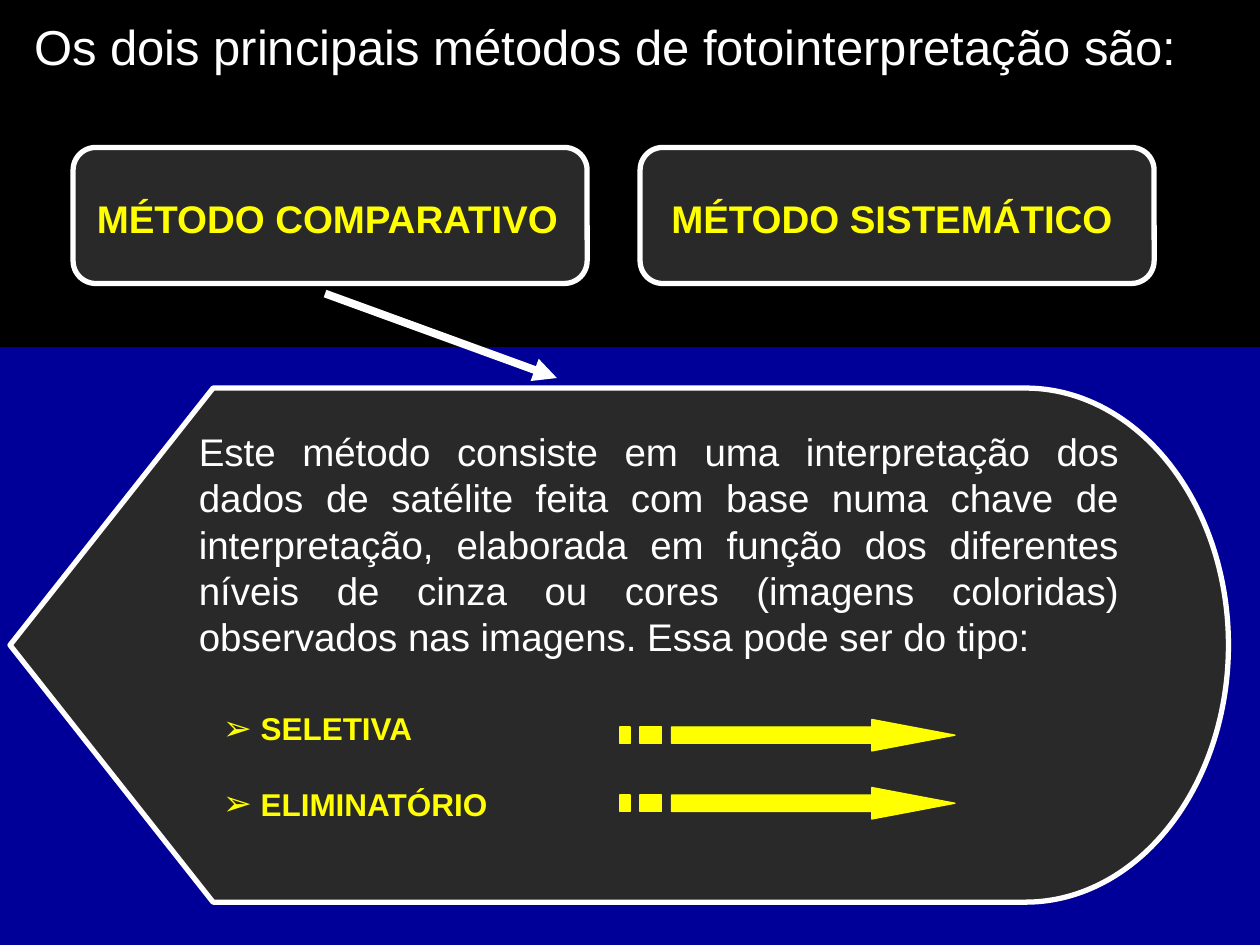
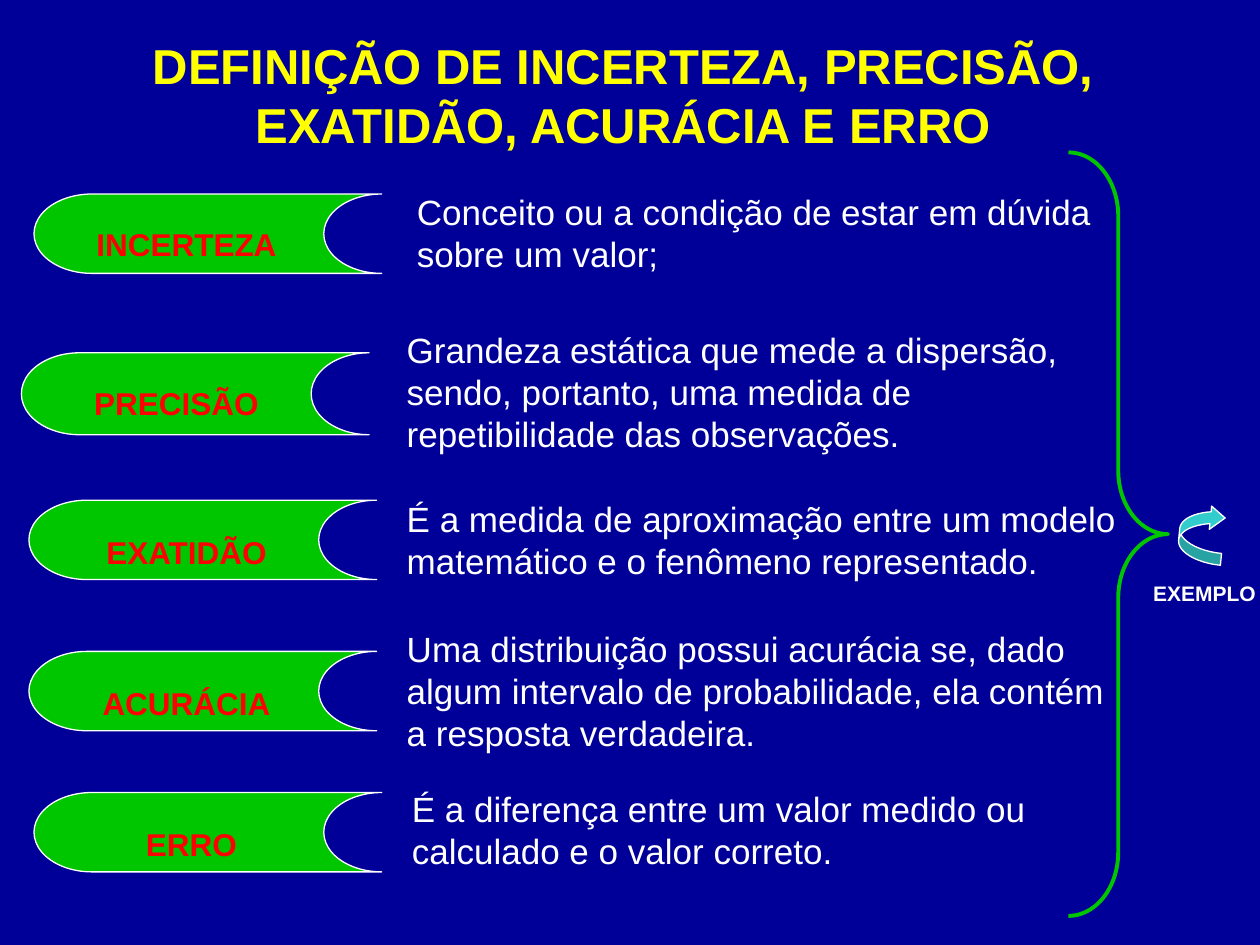
from dataclasses import dataclass

from lxml import etree
from pptx import Presentation
from pptx.dml.color import RGBColor
from pptx.enum.shapes import MSO_CONNECTOR, MSO_SHAPE as Shape
from pptx.enum.text import MSO_ANCHOR, MSO_AUTO_SIZE, PP_ALIGN as Align
from pptx.oxml.ns import qn
from pptx.util import Inches, Pt

COLORS = {
    "blue": "000099", "black": "000000", "panel": "292929", "white": "FFFFFF",
    "yellow": "FFFF00", "green": "00C600", "red": "FF0000", "cyan": "33CCCC",
}
FONT = "Arial"
Box = tuple[float, float, float, float]


@dataclass(frozen=True)
class TextStyle:
    size: float
    color: str
    bold: bool = False
    align: Align = Align.LEFT


@dataclass(frozen=True)
class Method:
    name: str
    left: float
    text_left: float


@dataclass(frozen=True)
class KeyType:
    name: str
    text_top: float
    arrow_top: float


@dataclass(frozen=True)
class Term:
    name: str
    definition: str
    tab: tuple[float, float]
    label: tuple[float, float]
    text: tuple[float, float]
    lines: int
    tab_height: float = 0.63


INTRO = TextStyle(28, "white", align=Align.JUSTIFY)
HEADING = TextStyle(28, "yellow", True, Align.CENTER)
METHOD = TextStyle(22, "yellow", True)
EXPLANATION = TextStyle(22, "white", align=Align.JUSTIFY)
BULLET = TextStyle(18, "yellow", True)
DEFINITION = TextStyle(20, "white")
LABEL = TextStyle(18, "red", True, Align.CENTER)
CAPTION = TextStyle(12, "white", True, Align.CENTER)

METHODS = [
    Method("MÉTODO COMPARATIVO", 0.58, 0.67),
    Method("MÉTODO SISTEMÁTICO", 5.08, 5.23),
]
KEY_TYPES = [
    KeyType("SELETIVA", 5.58, 5.71),
    KeyType("ELIMINATÓRIO", 6.18, 6.25),
]
TERMS = [
    Term("INCERTEZA", "Conceito ou a condição de estar em dúvida sobre um valor;",
         (0.27, 1.54), (0.22, 1.74), (3.21, 1.46), 2),
    Term("PRECISÃO", "Grandeza estática que mede a dispersão, sendo, portanto, "
         "uma medida de repetibilidade das observações.",
         (0.17, 2.8), (0.14, 3), (3.13, 2.56), 3, 0.65),
    Term("EXATIDÃO", "É a medida de aproximação entre um modelo matemático e o "
         "fenômeno representado.",
         (0.23, 3.97), (0.22, 4.18), (3.13, 3.9), 3),
    Term("ACURÁCIA", "Uma distribuição possui acurácia se, dado algum intervalo de "
         "probabilidade, ela contém a resposta verdadeira.",
         (0.23, 5.17), (0.22, 5.38), (3.13, 4.93), 3),
    Term("ERRO", "É a diferença entre um valor medido ou calculado e o valor correto.",
         (0.27, 6.29), (0.26, 6.5), (3.17, 6.2), 2),
]


def rgb(name: str) -> RGBColor:
    return RGBColor.from_string(COLORS[name])


def inches(box: Box) -> list[Inches]:
    return [Inches(v) for v in box]


def write(tf, text: str, style: TextStyle, wrap: bool = True) -> None:
    tf.text = text
    tf.word_wrap = wrap
    tf.auto_size = MSO_AUTO_SIZE.NONE
    tf.vertical_anchor = MSO_ANCHOR.TOP
    p = tf.paragraphs[0]
    p.alignment = style.align
    for r in p.runs:
        r.font.name = FONT
        r.font.size = Pt(style.size)
        r.font.bold = style.bold
        r.font.color.rgb = rgb(style.color)


def add_text(slide, box: Box, text: str, style: TextStyle, wrap: bool = True):
    sp = slide.shapes.add_textbox(*inches(box))
    write(sp.text_frame, text, style, wrap)
    return sp


def add_title_slide(prs, box: Box, text: str, style: TextStyle):
    slide = prs.slides.add_slide(prs.slide_layouts[5])
    title = slide.shapes.title
    title.left, title.top, title.width, title.height = inches(box)
    write(title.text_frame, text, style)
    return slide


def paint(sp, fill: str | None, line: str, width: float) -> None:
    sp.shadow.inherit = False
    if fill:
        sp.fill.solid()
        sp.fill.fore_color.rgb = rgb(fill)
    else:
        sp.fill.background()
    sp.line.color.rgb = rgb(line)
    sp.line.width = Pt(width)


def add_box(slide, kind: Shape, box: Box, fill: str | None, line: str, width: float = 0.75):
    sp = slide.shapes.add_shape(kind, *inches(box))
    paint(sp, fill, line, width)
    return sp


def add_pointer(slide, start: tuple[float, float], end: tuple[float, float]) -> None:
    line = slide.shapes.add_connector(MSO_CONNECTOR.STRAIGHT, *map(Inches, start + end))
    line.line.color.rgb = rgb("white")
    line.line.width = Pt(4.5)
    etree.SubElement(line.line._get_or_add_ln(), qn("a:tailEnd"), type="triangle")
    etree.SubElement(line._element.spPr, qn("a:effectLst"))


def add_bullet(p) -> None:
    pPr = p._p.get_or_add_pPr()
    pPr.set("marL", str(Inches(0.3)))
    pPr.set("indent", str(-Inches(0.3)))
    etree.SubElement(pPr, qn("a:buSzPct"), val="110000")
    etree.SubElement(pPr, qn("a:buFont"), typeface=FONT)
    etree.SubElement(pPr, qn("a:buChar"), char="➢")


def add_striped_arrow(slide, top: float) -> None:
    upper, lower, bottom = top + 0.06, top + 0.19, top + 0.25
    head = [(6.92, top), (6.92, upper), (5.33, upper), (5.33, lower),
            (6.92, lower), (6.92, bottom), (7.58, top + 0.125)]
    stripes = [[(left, upper), (left, lower), (right, lower), (right, upper)]
               for left, right in ((5.08, 5.25), (4.92, 5))]
    builder = slide.shapes.build_freeform(Inches(head[0][0]), Inches(head[0][1]))
    for i, outline in enumerate([head, *stripes]):
        points = [(Inches(x), Inches(y)) for x, y in outline]
        if i:
            builder.move_to(*points[0])
        builder.add_line_segments(points[1:], close=True)
    paint(builder.convert_to_shape(), "yellow", "yellow", 0.75)


def build_methods(prs) -> None:
    slide = add_title_slide(prs, (0.17, 0.08, 9.5, 0.57),
                            "Os dois principais métodos de fotointerpretação são:", INTRO)
    band = add_box(slide, Shape.RECTANGLE, (0, 0, 10, 2.75), "black", "black")
    slide.shapes._spTree.insert(2, band._element)
    for m in METHODS:
        add_box(slide, Shape.FLOWCHART_ALTERNATE_PROCESS, (m.left, 1.17, 4.08, 1.08),
                "panel", "white", 3)
        add_text(slide, (m.text_left, 1.5, 4.17, 0.47), m.name, METHOD)
    add_box(slide, Shape.FLOWCHART_DISPLAY, (0.08, 3.08, 9.67, 4.08), "panel", "white", 3)
    add_pointer(slide, (2.58, 2.33), (4.42, 3))
    add_text(slide, (1.48, 3.35, 7.5, 1.93),
             "Este método consiste em uma interpretação dos dados de satélite feita com base "
             "numa chave de interpretação, elaborada em função dos diferentes níveis de cinza "
             "ou cores (imagens coloridas) observados nas imagens. Essa pode ser do tipo:",
             EXPLANATION)
    for k in KEY_TYPES:
        sp = add_text(slide, (1.67, k.text_top, 2.6, 0.4), k.name, BULLET)
        add_bullet(sp.text_frame.paragraphs[0])
        add_striped_arrow(slide, k.arrow_top)


def build_definitions(prs) -> None:
    slide = add_title_slide(prs, (0.16, 0.23, 9.57, 1.03),
                            "DEFINIÇÃO DE INCERTEZA, PRECISÃO, EXATIDÃO, ACURÁCIA E ERRO",
                            HEADING)
    for t in TERMS:
        add_box(slide, Shape.FLOWCHART_STORED_DATA, (*t.tab, 2.76, t.tab_height),
                "green", "white")
        add_text(slide, (*t.label, 2.52, 0.4), t.name, LABEL)
        add_text(slide, (*t.text, 5.83, 0.1 + t.lines / 3), t.definition, DEFINITION)
    brace = add_box(slide, Shape.RIGHT_BRACE, (8.48, 1.21, 0.79, 6.06), None, "green", 2.25)
    brace.adjustments[0] = 0.64
    arrow = add_box(slide, Shape.CURVED_DOWN_ARROW, (9.3, 4.06, 0.47, 0.35), "cyan", "white")
    arrow.rotation = 275.7
    for i, value in enumerate((0.27, 0.53, 0.33)):
        arrow.adjustments[i] = value
    add_text(slide, (9.05, 4.56, 1.02, 0.3), "EXEMPLO", CAPTION, wrap=False)


def main() -> None:
    prs = Presentation()
    prs.slide_width, prs.slide_height = Inches(10), Inches(7.5)
    background = prs.slide_master.background.fill
    background.solid()
    background.fore_color.rgb = rgb("blue")
    build_methods(prs)
    build_definitions(prs)
    prs.save("out.pptx")


if __name__ == "__main__":
    main()
